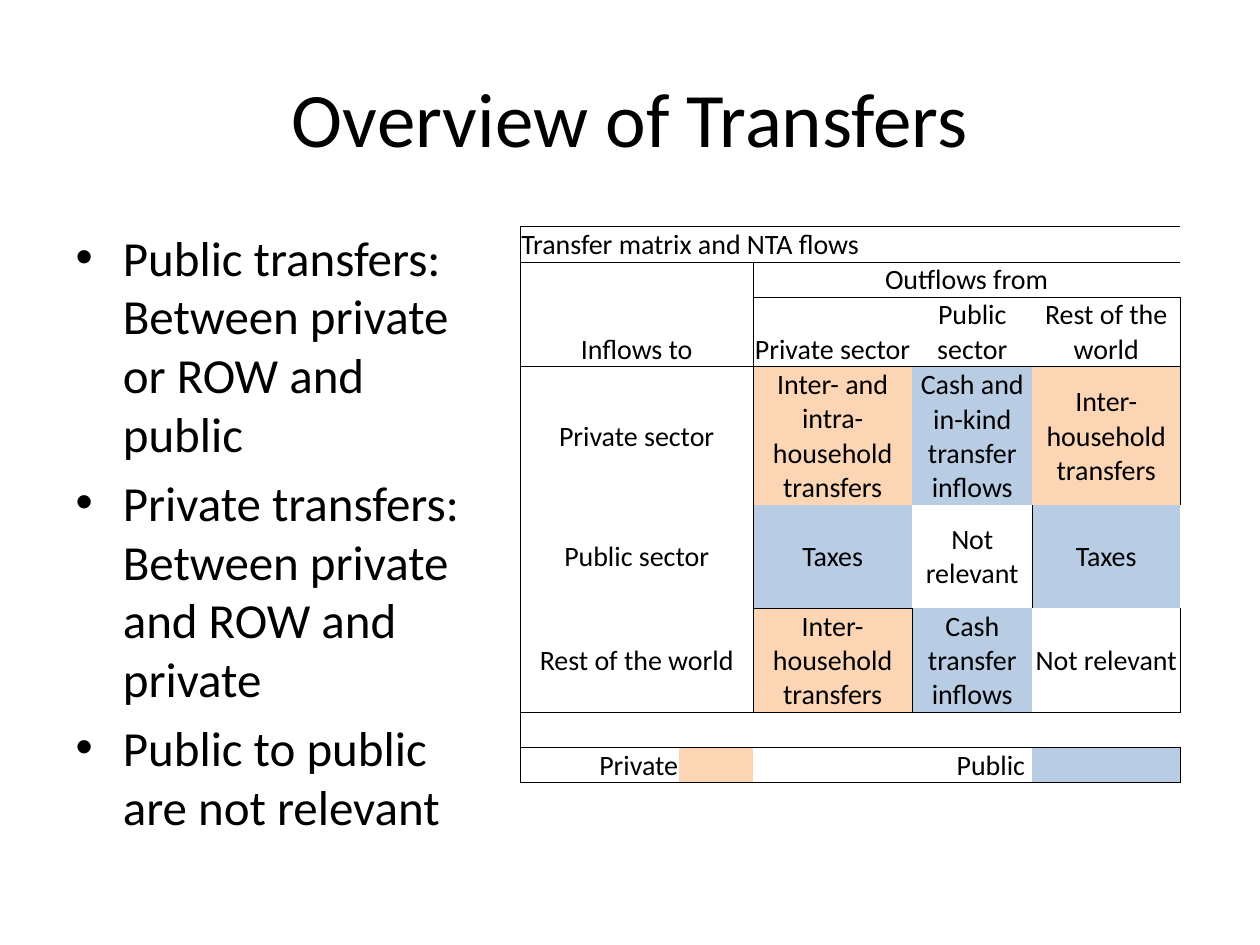
from lxml.etree import SubElement
from pptx import Presentation
from pptx.dml.color import RGBColor
from pptx.enum.text import MSO_ANCHOR, MSO_AUTO_SIZE, PP_ALIGN
from pptx.oxml.ns import qn
from pptx.util import Cm, Pt

BLACK = RGBColor(0, 0, 0)
PEACH = RGBColor(0xFC, 0xD5, 0xB4)
BLUE = RGBColor(0xB8, 0xCC, 0xE4)

LEFT, MID, RIGHT = PP_ALIGN.LEFT, PP_ALIGN.CENTER, PP_ALIGN.RIGHT
LOW, HALF = MSO_ANCHOR.BOTTOM, MSO_ANCHOR.MIDDLE

POINTS = [
    "Public transfers: Between private or ROW and public",
    "Private transfers: Between private and ROW and private",
    "Public to public are not relevant",
]
WIDTHS = [3.2, 1.49, 3.21, 2.42, 2.98]
HEIGHTS = [0.7, 0.7, 0.13, 1.14, 2.79, 2.08, 2.08, 0.7, 0.7]
CELLS = [
    (0, 0, 1, 5, "Transfer matrix and NTA flows", LEFT, LOW, None, "LRTB"),
    (1, 0, 2, 2, "", MID, LOW, None, "LRT"),
    (1, 2, 1, 3, "Outflows from", MID, LOW, None, "LRTB"),
    (2, 2, 2, 1, "Private sector", MID, LOW, None, "LTB"),
    (2, 3, 2, 1, "Public sector", MID, LOW, None, "TB"),
    (2, 4, 2, 1, "Rest of the world", MID, LOW, None, "RTB"),
    (3, 0, 1, 2, "Inflows to", MID, LOW, None, "LRB"),
    (4, 0, 1, 2, "Private sector", MID, HALF, None, "LRT"),
    (4, 2, 1, 1, "Inter- and intra- household transfers", MID, HALF, PEACH, "LT"),
    (4, 3, 1, 1, "Cash and in-kind transfer inflows", MID, LOW, BLUE, "T"),
    (4, 4, 1, 1, "Inter-household transfers", MID, HALF, PEACH, "RT"),
    (5, 0, 1, 2, "Public sector", MID, HALF, None, "LR"),
    (5, 2, 1, 1, "Taxes", MID, HALF, BLUE, "LB"),
    (5, 3, 1, 1, "Not relevant", MID, HALF, None, "R"),
    (5, 4, 1, 1, "Taxes", MID, HALF, BLUE, "L"),
    (6, 0, 1, 2, "Rest of the world", MID, HALF, None, "LRB"),
    (6, 2, 1, 1, "Inter-household transfers", MID, HALF, PEACH, "LRTB"),
    (6, 3, 1, 1, "Cash transfer inflows", MID, LOW, BLUE, "LB"),
    (6, 4, 1, 1, "Not relevant", MID, HALF, None, "RB"),
    (7, 0, 1, 5, "", LEFT, LOW, None, "LRTB"),
    (8, 0, 1, 1, "Private", RIGHT, HALF, None, "LTB"),
    (8, 1, 1, 1, "", LEFT, HALF, PEACH, "TB"),
    (8, 2, 1, 1, "", LEFT, HALF, None, "TB"),
    (8, 3, 1, 1, "Public ", RIGHT, HALF, None, "TB"),
    (8, 4, 1, 1, "", LEFT, HALF, BLUE, "RTB"),
]


class Deck:
    face = "Calibri"
    ink = BLACK
    rule = Pt(0.5)

    def __init__(self):
        self.show = Presentation()
        self.show.slide_width, self.show.slide_height = Cm(25.4), Cm(19.05)
        self.slide = self.show.slides.add_slide(self.show.slide_layouts[1])

    def style(self, para, size):
        for run in para.runs:
            run.font.name = self.face
            run.font.size = Pt(size)
            run.font.color.rgb = self.ink

    def place(self, shape, left, top, width, height):
        shape.left, shape.top = Cm(left), Cm(top)
        shape.width, shape.height = Cm(width), Cm(height)
        shape.text_frame.auto_size = MSO_AUTO_SIZE.NONE

    def title(self, text, *box):
        shape = self.slide.shapes.title
        self.place(shape, *box)
        shape.text_frame.text = text
        self.style(shape.text_frame.paragraphs[0], 44)

    def bullets(self, items, *box):
        shape = self.slide.placeholders[1]
        self.place(shape, *box)
        shape.text_frame.text = "\n".join(items)
        for para in shape.text_frame.paragraphs:
            self.style(para, 28)
        shape.text_frame.paragraphs[0].space_before = Pt(0)

    def edge(self, cell, sides):
        props = cell._tc.get_or_add_tcPr()
        for side in "LRTB":
            line = SubElement(props, qn("a:ln" + side), w=str(self.rule))
            if side in sides:
                fill = SubElement(line, qn("a:solidFill"))
                SubElement(fill, qn("a:srgbClr"), val=str(self.ink))
            else:
                SubElement(line, qn("a:noFill"))

    def paint(self, cell, fill, sides):
        cell.margin_left = cell.margin_right = cell.margin_top = Cm(0.02)
        cell.margin_bottom = 0
        self.edge(cell, sides)
        if fill is None:
            cell.fill.background()
        else:
            cell.fill.solid()
            cell.fill.fore_color.rgb = fill

    def label(self, cell, text, align, size):
        para = cell.text_frame.paragraphs[0]
        para.alignment = align
        if text:
            para.text = text
            self.style(para, size)
        else:
            SubElement(para._p, qn("a:endParaRPr"), sz=str(size * 100))

    def grid(self, cells, widths, heights, left, top, size):
        frame = self.slide.shapes.add_table(
            len(heights), len(widths), Cm(left), Cm(top),
            Cm(sum(widths)), Cm(sum(heights)))
        table = frame.table
        table.first_row = table.horz_banding = False
        for col, width in zip(table.columns, widths):
            col.width = Cm(width)
        for row, height in zip(table.rows, heights):
            row.height = Cm(height)
        for row, col, down, wide, text, align, anchor, fill, sides in cells:
            end, last = row + down - 1, col + wide - 1
            for y in range(row, end + 1):
                for x in range(col, last + 1):
                    outer = {"L": x == col, "R": x == last,
                             "T": y == row, "B": y == end}
                    part = table.cell(y, x)
                    self.paint(part, fill, [s for s in sides if outer[s]])
                    self.label(part, text if (y, x) == (row, col) else "",
                               align, size)
            head = table.cell(row, col)
            head.vertical_anchor = anchor
            if down * wide > 1:
                head.merge(table.cell(end, last))


def main():
    deck = Deck()
    deck.title("Overview of Transfers", 1.27, 0.76, 22.86, 3.18)
    deck.bullets(POINTS, 1.27, 4.45, 8.46, 12.57)
    deck.grid(CELLS, WIDTHS, HEIGHTS, 10.49, 4.57, 16)
    deck.show.save("out.pptx")


if __name__ == "__main__":
    main()
